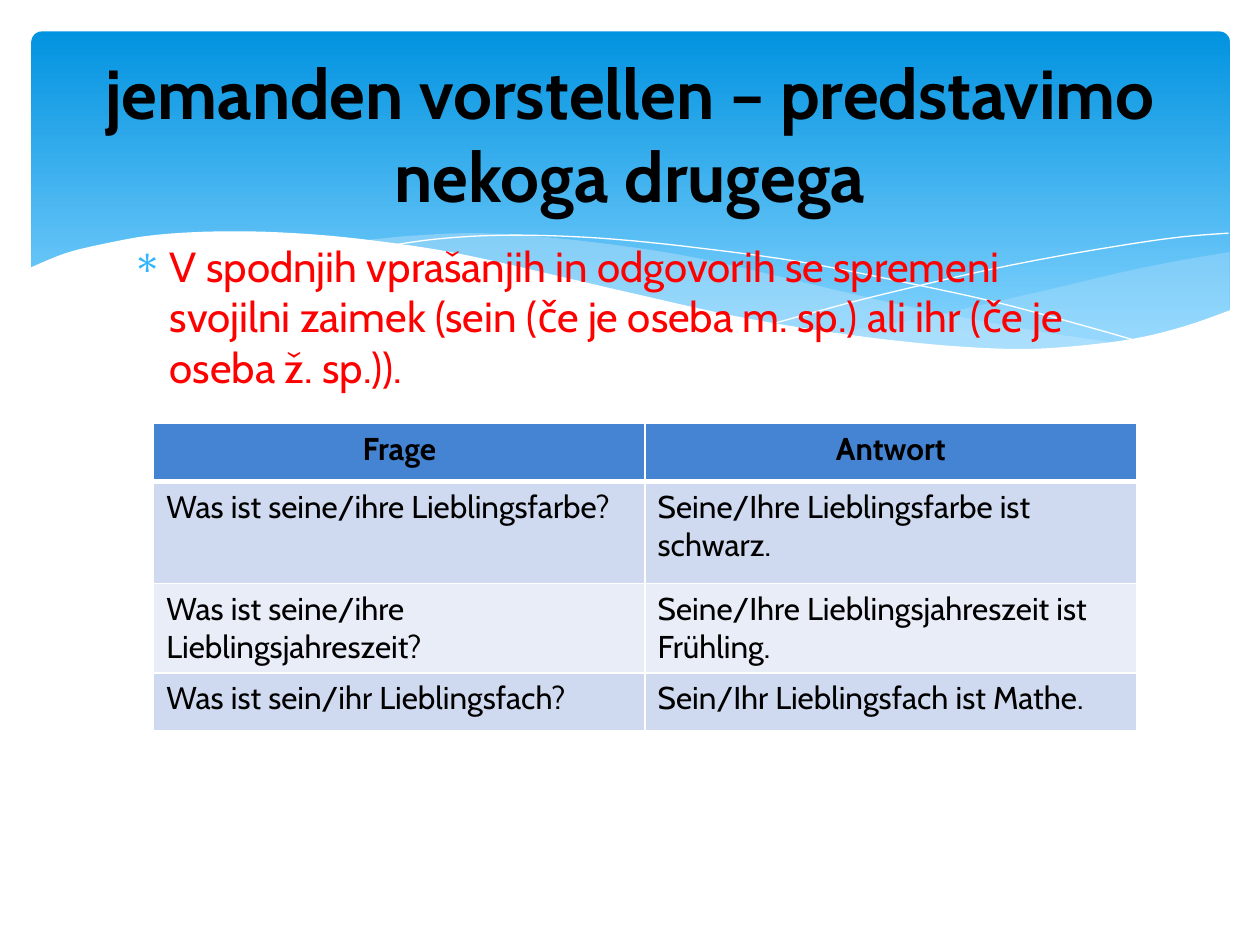
from itertools import chain

from lxml import etree
from pptx import Presentation, util as u
from pptx.dml.color import RGBColor
from pptx.enum import shapes, text
from pptx.oxml import ns

WHITE = RGBColor(0xFF, 0xFF, 0xFF)
BLACK = RGBColor(0, 0, 0)
RED = RGBColor(0xFF, 0, 0)
DEEP_BLUE = RGBColor(0x02, 0x93, 0xE0)
SKY_BLUE = RGBColor(0x83, 0xD3, 0xFE)
PALE_BLUE = RGBColor(0xC6, 0xE7, 0xFC)
BULLET_BLUE = RGBColor(0x31, 0xB6, 0xFD)
HEADER_BLUE = RGBColor(0x45, 0x84, 0xD3)
BANDS = (RGBColor(0xCF, 0xD9, 0xEF), RGBColor(0xE9, 0xED, 0xF7))

RIGHT_TOP = [(97.6, 20), (93.5, 20.7), (89.1, 21.6), (83.2, 23), (77.9, 24.2), (72.9, 25.3), (66.1, 26.5)]
RIGHT_BOTTOM = [(66.1, 26.5), (70.5, 27.1), (75.7, 27.6), (80.3, 27.8), (84.4, 27.7), (88.1, 27.3),
                (92.1, 26.5), (95, 25.7), (97.6, 24.7)]
MIDDLE_TOP = [(89.3, 27.3), (83.7, 26.5), (77.5, 25.4), (70.6, 24), (62.9, 22.2), (56.9, 20.8),
              (51.4, 19.8), (44.2, 18.9), (38, 18.5), (32.8, 18.7), (28.6, 19.1)]
MIDDLE_BOTTOM = [(28.6, 19.1), (34.2, 19.9), (40.4, 21.1), (49.1, 23.2), (56.6, 24.8), (63.4, 26.1),
                 (69.5, 27), (76.1, 27.7), (81.8, 27.8), (85.7, 27.7), (89.3, 27.3)]
FALLING_LINE = [(30.9, 19.5), (34.4, 19), (38.7, 18.7), (43.3, 18.7), (48.9, 19), (55.6, 19.7),
                (63.6, 20.8), (72.7, 22.6), (79.5, 24.1), (86.9, 26.1), (90.7, 27.2)]
RISING_LINE = [(61.3, 25.7), (65.3, 24.6), (69.5, 23.5), (77.6, 21.6), (83.6, 20.4), (89.5, 19.4),
               (93.8, 18.8), (97.5, 18.5)]
FRONT_WAVE = [(97.7, 24.6), (94, 25.9), (89.9, 26.9), (85, 27.5), (80.9, 27.7), (76.1, 27.5),
              (70.8, 27), (64.8, 26.2), (57.9, 25), (50.3, 23.3), (44.7, 22), (39.1, 20.7),
              (34, 19.7), (27.1, 18.8), (21.1, 18.4), (16.1, 18.4), (11.9, 18.7), (8.5, 19.3),
              (5.2, 20.1), (2.3, 21.3)]
FRONT_BASE = [(2.3, 32.9), (97.7, 32.9)]

ROWS = (("Frage", "Antwort"),
        ("Was ist seine/ihre Lieblingsfarbe?", "Seine/Ihre Lieblingsfarbe ist schwarz."),
        ("Was ist seine/ihre Lieblingsjahreszeit?", "Seine/Ihre Lieblingsjahreszeit ist Frühling."),
        ("Was ist sein/ihr Lieblingsfach?", "Sein/Ihr Lieblingsfach ist Mathe."))


def smooth(points, steps=5):
    """Return a Catmull-Rom curve through the points."""
    padded = [points[0], *points, points[-1]]
    curve = [points[0]]
    for a, b, c, d in zip(padded, padded[1:], padded[2:], padded[3:]):
        for t in (step / steps for step in range(1, steps + 1)):
            curve.append(tuple(
                (2 * q + (r - p) * t + (2 * p - 5 * q + 4 * r - s) * t**2 + (3 * q - p - 3 * r + s) * t**3) / 2
                for p, q, r, s in zip(a, b, c, d)))
    return curve


def add_node(parent, tag, **attributes):
    """Append a DrawingML element."""
    return etree.SubElement(parent, ns.qn(tag), {key: str(value) for key, value in attributes.items()})


class SlideBuilder:
    """Holds the style and current slide on a grid of 100 columns by 75 rows."""

    font = "Cabin"

    def __init__(self, deck):
        self.page = deck.slides.add_slide(deck.slide_layouts[6])
        self.unit = deck.slide_width / 100

    def grid(self, *lengths):
        """Convert grid lengths to slide lengths."""
        return [u.Emu(round(length * self.unit)) for length in lengths]

    def banner(self, area, radius, top, bottom):
        """Add a rounded panel with a vertical gradient."""
        panel = self.page.shapes.add_shape(shapes.MSO_SHAPE.ROUNDED_RECTANGLE, *self.grid(*area))
        panel.adjustments[0] = radius
        panel.shadow.inherit = False
        panel.line.fill.background()
        panel.fill.gradient()
        panel.fill.gradient_angle = 270
        for stop, position, color in zip(panel.fill.gradient_stops, (0, 0.9), (top, bottom)):
            stop.position, stop.color.rgb = position, color

    def outline(self, points, closed):
        """Add a freeform through the points."""
        start, *rest = (self.grid(*point) for point in points)
        builder = self.page.shapes.build_freeform(*start)
        builder.add_line_segments(rest, close=closed)
        shape = builder.convert_to_shape()
        shape.shadow.inherit = False
        return shape

    def wave(self, *edges, color, opacity=100):
        """Add a filled wave bounded by the edges."""
        shape = self.outline(list(chain(*edges)), True)
        shape.line.fill.background()
        shape.fill.solid()
        shape.fill.fore_color.rgb = color
        if opacity < 100:
            for node in shape.element.spPr.iter(ns.qn("a:srgbClr")):
                add_node(node, "a:alpha", val=opacity * 1000)

    def curve(self, points):
        """Add a white hairline."""
        shape = self.outline(smooth(points), False)
        shape.fill.background()
        shape.line.color.rgb = WHITE
        shape.line.width = u.Pt(0)

    def set_words(self, para, words, size, color=BLACK, bold=False, align=text.PP_ALIGN.LEFT):
        """Fill a paragraph with styled words."""
        para.text = words
        para.alignment = align
        para.font.name, para.font.size, para.font.bold = self.font, u.Pt(size), bold
        para.font.color.rgb = color

    def text_box(self, area, words, size, anchor=text.MSO_ANCHOR.TOP, **style):
        """Add a wrapped text box and return its paragraph."""
        frame = self.page.shapes.add_textbox(*self.grid(*area)).text_frame
        frame.word_wrap = True
        frame.vertical_anchor = anchor
        para = frame.paragraphs[0]
        self.set_words(para, words, size, **style)
        return para

    def bullet(self, para, mark, color, indent):
        """Give a paragraph a hanging bullet."""
        [width] = self.grid(indent)
        properties = para._p.get_or_add_pPr()
        properties.set("marL", str(width))
        properties.set("indent", str(-width))
        bullet_color = properties.makeelement(ns.qn("a:buClr"))
        add_node(bullet_color, "a:srgbClr", val=color)
        bullet_mark = properties.makeelement(ns.qn("a:buChar"), {"char": mark})
        properties.insert(0, bullet_color)
        properties.insert(1, bullet_mark)

    def borders(self, cell, **widths):
        """Draw white cell borders, given in points by side."""
        properties = cell._tc.get_or_add_tcPr()
        for side, width in widths.items():
            line = add_node(properties, f"a:ln{side}", w=int(u.Pt(width)))
            add_node(add_node(line, "a:solidFill"), "a:srgbClr", val=WHITE)

    def table(self, area, heights, rows, size):
        """Add a banded table with a header row."""
        table = self.page.shapes.add_table(len(rows), len(rows[0]), *self.grid(*area)).table
        for row, height in zip(table.rows, self.grid(*heights)):
            row.height = height
        for index, values in enumerate(rows):
            header = index == 0
            for column, words in enumerate(values):
                cell = table.cell(index, column)
                self.borders(cell, L=1, R=1, T=3 if index == 1 else 1, B=3 if header else 1)
                cell.fill.solid()
                cell.fill.fore_color.rgb = HEADER_BLUE if header else BANDS[(index - 1) % 2]
                self.set_words(cell.text_frame.paragraphs[0], words, size, bold=header,
                               align=text.PP_ALIGN.CENTER if header else text.PP_ALIGN.LEFT)


def main():
    """Build the slide on introducing someone."""
    deck = Presentation()
    deck.slide_width, deck.slide_height = u.Inches(10), u.Inches(7.5)
    slide = SlideBuilder(deck)
    slide.banner((2.5, 2.5, 95.1, 27), 0.03, DEEP_BLUE, SKY_BLUE)
    slide.wave(smooth(RIGHT_TOP), smooth(RIGHT_BOTTOM), color=PALE_BLUE, opacity=29)
    slide.wave(smooth(MIDDLE_TOP), smooth(MIDDLE_BOTTOM), color=PALE_BLUE, opacity=40)
    slide.curve(FALLING_LINE)
    slide.curve(RISING_LINE)
    slide.wave(smooth(FRONT_WAVE), FRONT_BASE, color=WHITE)
    intro = slide.text_box(
        (9.5, 18.6, 81, 48.4),
        "V spodnjih vprašanjih in odgovorih se spremeni svojilni zaimek "
        "(sein (če je oseba m. sp.) ali ihr (če je oseba ž. sp.)).", 24, color=RED)
    slide.bullet(intro, "∗", BULLET_BLUE, 3)
    slide.text_box((5, 3.7, 90, 13.7), "jemanden vorstellen – predstavimo nekoga drugega", 39.6,
                   anchor=text.MSO_ANCHOR.MIDDLE, bold=True, align=text.PP_ALIGN.CENTER)
    slide.table((12.2, 33.6, 78, 24.4), (4.6, 8.1, 7.1, 4.6), ROWS, 18)
    deck.save("out.pptx")


if __name__ == "__main__":
    main()
